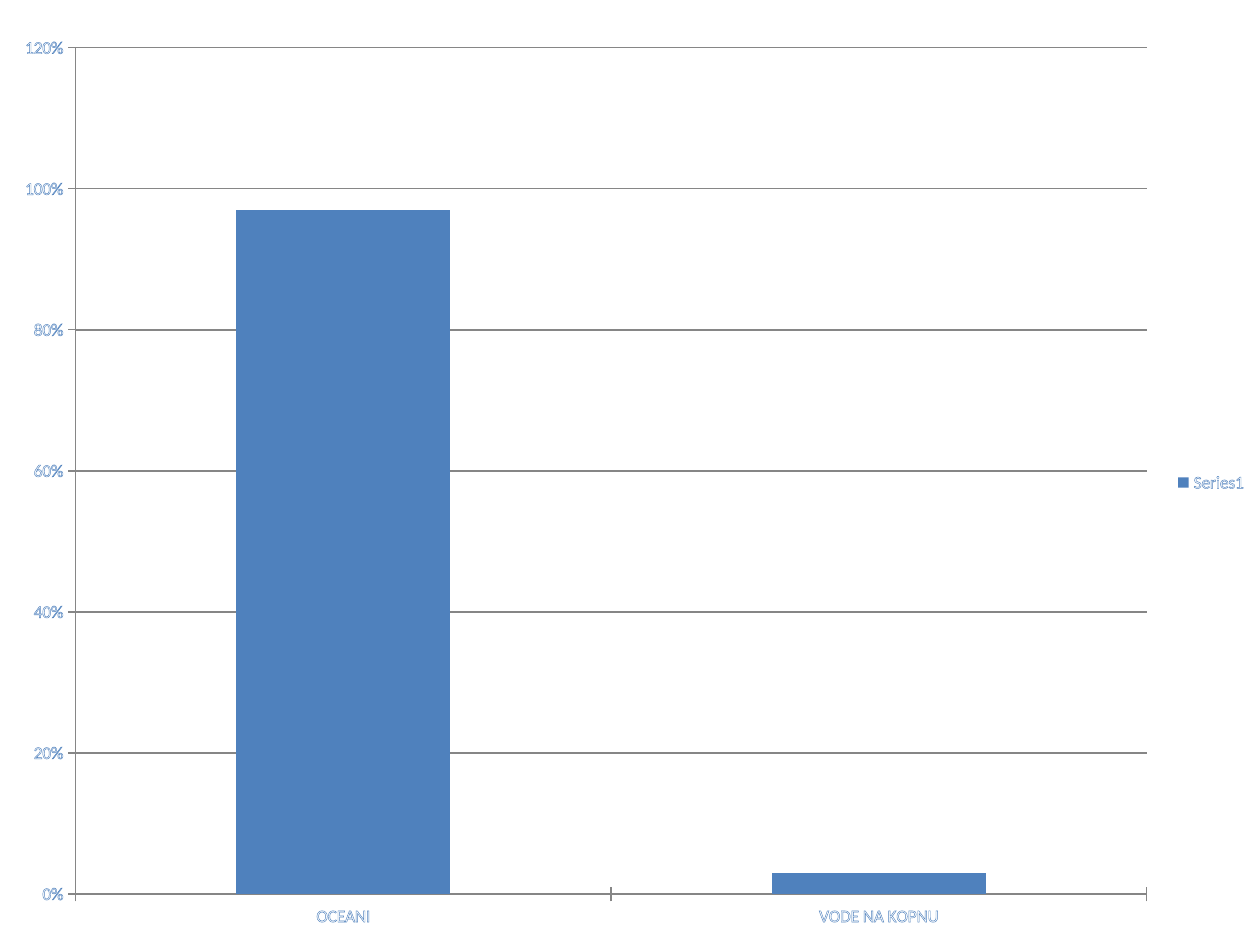
"""Build a slide with a column chart of ocean and land water shares."""
from lxml.etree import SubElement
from pptx import Presentation
from pptx.chart.data import CategoryChartData
from pptx.dml.color import RGBColor
from pptx.enum.chart import XL_CHART_TYPE as CT, XL_LEGEND_POSITION as LP, XL_TICK_MARK as TM
from pptx.oxml import parse_xml
from pptx.oxml.ns import nsdecls, qn
from pptx.util import Inches, Pt

SHARES = [("OCEANI", 0.97), ("VODE NA KOPNU", 0.03)]
SERIES = "Series1"
PLOT = {"x": 0.06, "y": 0.03, "w": 0.85, "h": 0.915}
BLUE = RGBColor(0x4F, 0x81, 0xBD)
WHITE = RGBColor(0xFF, 0xFF, 0xFF)
GRAY = RGBColor(0x86, 0x86, 0x86)


def outline_text(font):
    font.name, font.size, font.bold = "Calibri", Pt(10), False
    font.color.rgb = WHITE


def place_plot(chart):
    area = chart._chartSpace.chart.plotArea
    for old in area.findall(qn("c:layout")):
        area.remove(old)
    layout = parse_xml(f"<c:layout {nsdecls('c')}/>")
    manual = SubElement(layout, qn("c:manualLayout"))
    settings = [("layoutTarget", "inner"), ("xMode", "edge"), ("yMode", "edge"), *PLOT.items()]
    for tag, val in settings:
        SubElement(manual, qn(f"c:{tag}")).set("val", str(val))
    area.insert(0, layout)


prs = Presentation()
prs.slide_width, prs.slide_height = Inches(10), Inches(7.5)
s = prs.slides.add_slide(prs.slide_layouts[6])

data = CategoryChartData(number_format="0%")
data.categories = [name for name, _ in SHARES]
data.add_series(SERIES, [share for _, share in SHARES])
chart = s.shapes.add_chart(
    CT.COLUMN_CLUSTERED, Inches(0), Inches(0.16), Inches(10), Inches(7.34), data
).chart
chart.has_title = False
outline_text(chart.font)
chart.has_legend = True
chart.legend.position = LP.RIGHT
chart.legend.include_in_layout = False

plot = chart.plots[0]
plot.gap_width = 150
plot.vary_by_categories = False
fill = plot.series[0].format.fill
fill.solid()
fill.fore_color.rgb = BLUE

values = chart.value_axis
values.minimum_scale, values.maximum_scale, values.major_unit = 0, 1.2, 0.2
values.has_major_gridlines = True
values.tick_labels.number_format = "0%"
values.tick_labels.number_format_is_linked = False
for axis in (chart.category_axis, values):
    axis.major_tick_mark = TM.CROSS
    outline_text(axis.tick_labels.font)
    axis.format.line.color.rgb = GRAY
values.major_gridlines.format.line.color.rgb = GRAY
outline_text(chart.legend.font)

for props in chart._chartSpace.iter(qn("a:defRPr")):
    props.insert(0, parse_xml(
        f'<a:ln {nsdecls("a")} w="9525"><a:solidFill><a:srgbClr val="{BLUE}"/></a:solidFill></a:ln>'
    ))
place_plot(chart)

prs.save("out.pptx")
